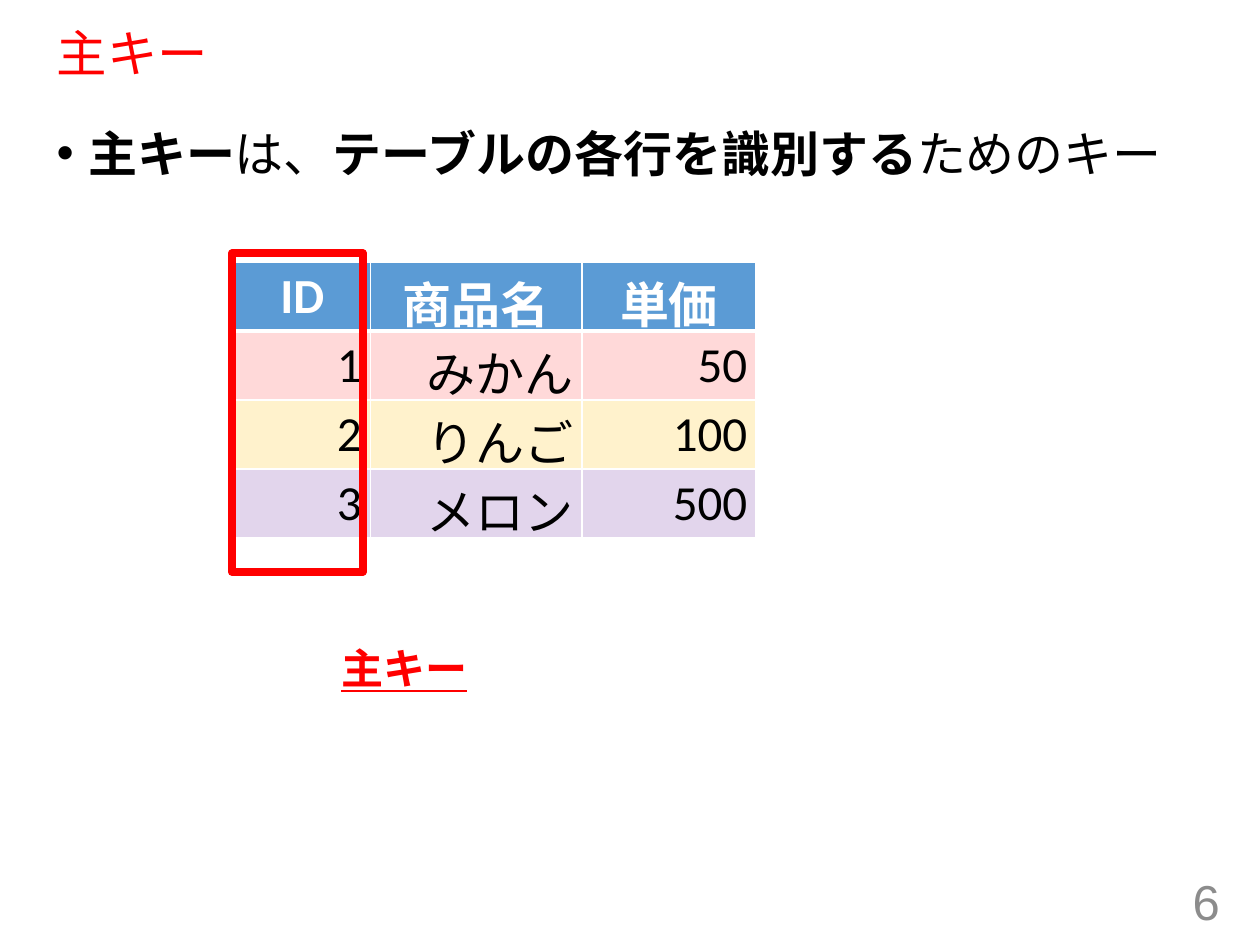
from lxml import etree
from pptx import Presentation
from pptx.dml.color import RGBColor
from pptx.enum.shapes import MSO_SHAPE
from pptx.enum.text import MSO_ANCHOR, MSO_AUTO_SIZE, PP_ALIGN
from pptx.oxml.ns import qn
from pptx.util import Inches, Pt

JP = "Noto Sans CJK JP"


def rgb(color):
    return RGBColor.from_string(color)


def add_run(p, text, size, color, font="Arial", bold=False):
    r = p.add_run()
    r.text = text
    r.font.size, r.font.bold, r.font.name = Pt(size), bold, font
    r.font.color.rgb = rgb(color)
    etree.SubElement(r._r.get_or_add_rPr(), qn("a:ea"), typeface=JP)
    return r


prs = Presentation()
prs.slide_width, prs.slide_height = Inches(10), Inches(7.5)
s = prs.slides.add_slide(prs.slide_layouts[1])

# Title
title = s.shapes.title
title.left, title.top, title.width, title.height = (
    Inches(v) for v in (0.35, 0.19, 9.25, 0.51))
tf = title.text_frame
tf.auto_size = MSO_AUTO_SIZE.NONE
tf.vertical_anchor = MSO_ANCHOR.MIDDLE
p = tf.paragraphs[0]
p.alignment, p.line_spacing = PP_ALIGN.LEFT, 0.9
add_run(p, "主キー", 28.8, "FF0000")

# Definition
body = s.placeholders[1]
body.left, body.top, body.width, body.height = (
    Inches(v) for v in (0.35, 0.93, 9.25, 5.83))
tf = body.text_frame
tf.auto_size = MSO_AUTO_SIZE.NONE
p = tf.paragraphs[0]
p.space_before = Pt(10)
pPr = p._p.get_or_add_pPr()
pPr.set("marL", str(Inches(0.25)))
pPr.set("indent", str(Inches(-0.25)))
etree.SubElement(pPr, qn("a:buFont"), typeface="Arial")
etree.SubElement(pPr, qn("a:buChar"), char="•")
for text, bold in [("主キー", True), ("は、", False),
                   ("テーブルの各行を識別する", True), ("ためのキー", False)]:
    add_run(p, text, 28, "000000", bold=bold)

# Slide number
sp = s.shapes.add_textbox(Inches(7.53), Inches(6.95), Inches(2.25), Inches(0.4))
tf = sp.text_frame
tf.word_wrap = True
tf.vertical_anchor = MSO_ANCHOR.MIDDLE
p = tf.paragraphs[0]
p.alignment = PP_ALIGN.RIGHT
add_run(p, "6", 28, "8C8C8C")

# Key column label
sp = s.shapes.add_textbox(Inches(2.61), Inches(5.05), Inches(1.21), Inches(0.5))
tf = sp.text_frame
tf.word_wrap = False
tf.auto_size = MSO_AUTO_SIZE.SHAPE_TO_FIT_TEXT
r = add_run(tf.paragraphs[0], "主キー", 24, "FF0000", JP, bold=True)
r.font.underline = True

# Product table: values, fill colour, opacity in percent
rows = [
    (("ID", "商品名", "単価"), "5B9BD5", 100),
    (("1", "みかん", "50"), "FF0000", 15),
    (("2", "りんご", "100"), "FFC000", 20),
    (("3", "メロン", "500"), "7030A0", 20),
]
widths = (1.08, 1.68, 1.38)
row_height = 0.54
table = s.shapes.add_table(len(rows), len(widths), Inches(1.86), Inches(2.08),
                           Inches(sum(widths)), Inches(row_height * len(rows))).table
for column, width in zip(table.columns, widths):
    column.width = Inches(width)
for i, (values, fill, opacity) in enumerate(rows):
    header = i == 0
    table.rows[i].height = Inches(row_height)
    for j, value in enumerate(values):
        cell = table.cell(i, j)
        cell.margin_left = cell.margin_right = Inches(0.07)
        cell.margin_top = cell.margin_bottom = Inches(0.04)
        p = cell.text_frame.paragraphs[0]
        p.alignment = PP_ALIGN.CENTER if header else PP_ALIGN.RIGHT
        add_run(p, value, 28, "FFFFFF" if header else "000000", "Calibri", header)
        cell.fill.solid()
        cell.fill.fore_color.rgb = rgb(fill)
        tcPr = cell._tc.get_or_add_tcPr()
        if opacity < 100:
            etree.SubElement(tcPr.find(".//" + qn("a:srgbClr")), qn("a:alpha"),
                             val=str(opacity * 1000))
        # White borders, thicker between header and data
        for k, side in enumerate(("lnL", "lnR", "lnT", "lnB")):
            thick = (header and side == "lnB") or (i == 1 and side == "lnT")
            ln = etree.Element(qn("a:" + side), w=str(Pt(3 if thick else 1)))
            solid = etree.SubElement(ln, qn("a:solidFill"))
            etree.SubElement(solid, qn("a:srgbClr"), val="FFFFFF")
            tcPr.insert(k, ln)

# Frame around the key column
sp = s.shapes.add_shape(MSO_SHAPE.RECTANGLE, Inches(1.84), Inches(2.01),
                        Inches(1.04), Inches(2.53))
sp.shadow.inherit = False
sp.fill.background()
sp.line.color.rgb = rgb("FF0000")
sp.line.width = Pt(4.25)

prs.save("out.pptx")
